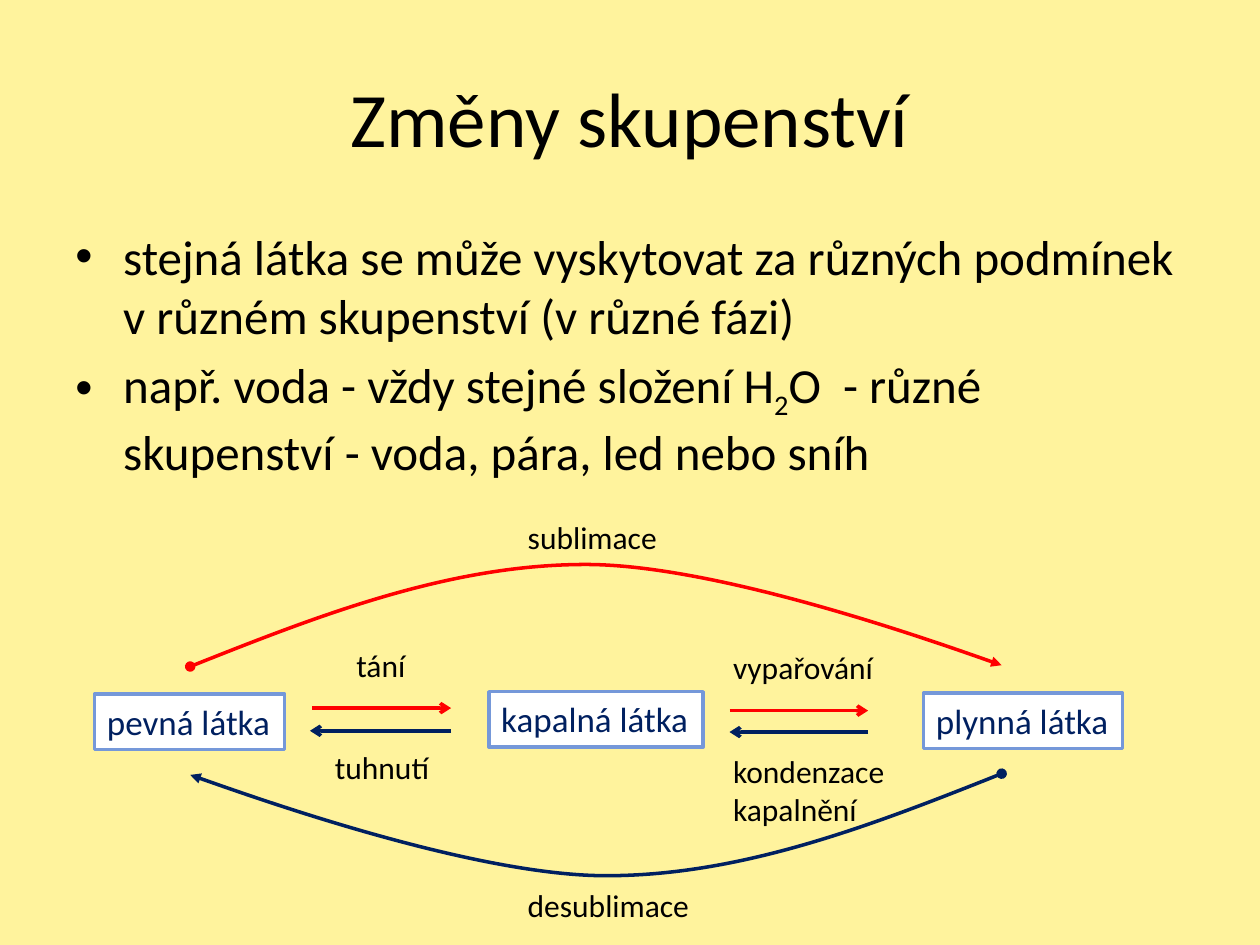
import dataclasses

import pptx
import pptx.dml.color
import pptx.enum.shapes
import pptx.enum.text
import pptx.oxml.ns
import pptx.oxml.xmlchemy
import pptx.util
from lxml import etree

RGBColor = pptx.dml.color.RGBColor
CREAM = RGBColor(0xFF, 0xF3, 0x9D)
BLACK = RGBColor(0, 0, 0)
WHITE = RGBColor(0xFF, 0xFF, 0xFF)
NAVY = RGBColor(0, 0x20, 0x60)
RED = RGBColor(0xFF, 0, 0)
SKY = RGBColor(0x75, 0x98, 0xD9)

COLUMNS, ROWS = 100, 75
WIDTH, HEIGHT = pptx.util.Inches(10), pptx.util.Inches(7.5)
STROKE = pptx.util.Pt(2)
qn = pptx.oxml.ns.qn


@dataclasses.dataclass
class Region:
    """A box measured in grid columns and rows."""

    left: float
    top: float
    width: float
    height: float

    def inner(self, left, top, width, height):
        """Return a box placed relative to this one."""
        return Region(self.left + left, self.top + top, width, height)

    def point(self, column, row):
        """Return slide lengths of a point inside this box."""
        return (int((self.left + column) * WIDTH / COLUMNS),
                int((self.top + row) * HEIGHT / ROWS))

    def lengths(self):
        """Return left, top, width and height as slide lengths."""
        return (*self.point(0, 0), int(self.width * WIDTH / COLUMNS),
                int(self.height * HEIGHT / ROWS))


def write(shape, text, size=18, color=BLACK, align=pptx.enum.text.PP_ALIGN.LEFT,
          anchor=pptx.enum.text.MSO_ANCHOR.TOP, wrap=False, bullet=False):
    """Write lines of text, with subscripts between underscores."""
    frame = shape.text_frame
    frame.word_wrap = wrap
    frame.vertical_anchor = anchor
    for index, line in enumerate(text.split("\n")):
        paragraph = frame.add_paragraph() if index else frame.paragraphs[0]
        paragraph.alignment = align
        if bullet:
            paragraph.space_before = pptx.util.Pt(size * 0.2)
            properties = paragraph._p.get_or_add_pPr()
            indent = pptx.util.Inches(0.38)
            properties.set("marL", str(indent))
            properties.set("indent", str(-indent))
            etree.SubElement(properties, qn("a:buFont")).set("typeface", "Arial")
            etree.SubElement(properties, qn("a:buChar")).set("char", "•")
        for part, words in enumerate(line.split("_")):
            run = paragraph.add_run()
            run.text = words
            run.font.name = "Calibri"
            run.font.size = pptx.util.Pt(size)
            run.font.color.rgb = color
            if part % 2:
                run._r.get_or_add_rPr().set("baseline", "-25000")


def add_text(slide, region, text, **style):
    """Place a text box in a region."""
    write(slide.shapes.add_textbox(*region.lengths()), text, **style)


def style_stroke(stroke, color, **ends):
    """Colour a stroke, give it line ends and drop its shadow."""
    stroke.line.color.rgb = color
    stroke.line.width = STROKE
    properties = stroke._element.spPr
    for end, kind in ends.items():
        etree.SubElement(properties.find(qn("a:ln")), qn(f"a:{end}")).set("type", kind)
    etree.SubElement(properties, qn("a:effectLst"))


def add_arrow(slide, region, start, end, row, color):
    """Draw a level arrow between two columns."""
    arrow = slide.shapes.add_connector(
        pptx.enum.shapes.MSO_CONNECTOR.STRAIGHT,
        *region.point(start, row), *region.point(end, row))
    style_stroke(arrow, color, tailEnd="arrow")


def add_arc(slide, region, controls, color):
    """Draw a curved arrow through Bézier control points."""
    start, *others = [region.point(*control) for control in controls]
    builder = slide.shapes.build_freeform(*start)
    builder.add_line_segments(others, close=False)
    arc = builder.convert_to_shape()
    segments = list(arc._element.iter(qn("a:lnTo")))
    for first in range(0, len(segments), 3):
        curve = etree.SubElement(segments[first].getparent(), qn("a:cubicBezTo"))
        for segment in segments[first:first + 3]:
            curve.append(segment[0])
            segment.getparent().remove(segment)
    arc.fill.background()
    style_stroke(arc, color, headEnd="oval", tailEnd="triangle")


def add_state(slide, region, name):
    """Draw a framed state of matter."""
    state = slide.shapes.add_shape(
        pptx.enum.shapes.MSO_SHAPE.RECTANGLE, *region.lengths())
    state.shadow.inherit = False
    state.fill.solid()
    state.fill.fore_color.rgb = WHITE
    state.line.color.rgb = SKY
    state.line.width = STROKE
    write(state, name, size=20, color=NAVY)


def add_title(slide, region):
    """Place the slide title."""
    add_text(slide, region, "Změny skupenství", size=44, wrap=True,
             align=pptx.enum.text.PP_ALIGN.CENTER,
             anchor=pptx.enum.text.MSO_ANCHOR.MIDDLE)


def add_explanation(slide, region):
    """Place the bulleted explanation."""
    add_text(slide, region,
             "stejná látka se může vyskytovat za různých podmínek "
             "v různém skupenství (v různé fázi)\n"
             "např. voda - vždy stejné složení H_2_O  - různé "
             "skupenství - voda, pára, led nebo sníh",
             size=28, wrap=True, bullet=True)


def add_transitions(slide, region):
    """Draw the states of matter and the changes between them."""
    for start, end, row, color in [
            (17.8, 28.8, 16.2, RED), (50.9, 61.9, 16.4, RED),
            (28.8, 17.6, 18, NAVY), (61.9, 50.9, 18.1, NAVY)]:
        add_arrow(slide, region, start, end, row, color)

    sublimation = [(8.1, 12.9), (18.4, 8.8), (28.8, 4.8), (39.5, 4.8),
                   (50.2, 4.8), (72.5, 12.8), (72.5, 12.8)]
    desublimation = [(80.6 - column, 34.3 - row) for column, row in sublimation]
    add_arc(slide, region, sublimation, RED)
    add_arc(slide, region, desublimation, NAVY)

    for name, left, top, width in [
            ("pevná látka", 0.5, 15.1, 15.1),
            ("kapalná látka", 31.8, 14.9, 17),
            ("plynná látka", 66.3, 15, 15.8)]:
        add_state(slide, region.inner(left, top, width, 4.4), name)

    for change, left, top, width, height in [
            ("sublimace", 33.9, 0.6, 12.4, 4),
            ("tání", 20.3, 10.8, 6, 4),
            ("vypařování", 50.2, 10.9, 13.2, 4),
            ("tuhnutí", 18.6, 18.9, 9.6, 4),
            ("kondenzace\nkapalnění", 50.2, 19.2, 14.2, 7.1),
            ("desublimace", 33.9, 29.8, 15, 4)]:
        add_text(slide, region.inner(left, top, width, height), change)


def main():
    """Build and save the slide."""
    deck = pptx.Presentation()
    deck.slide_width, deck.slide_height = WIDTH, HEIGHT
    slide = deck.slides.add_slide(deck.slide_layouts[6])
    slide.background.fill.solid()
    slide.background.fill.fore_color.rgb = CREAM
    add_title(slide, Region(5, 3, 90, 12.5))
    add_explanation(slide, Region(5, 17.5, 90, 22))
    add_transitions(slide, Region(7, 40, 84, 35))
    deck.save("out.pptx")


if __name__ == "__main__":
    main()
